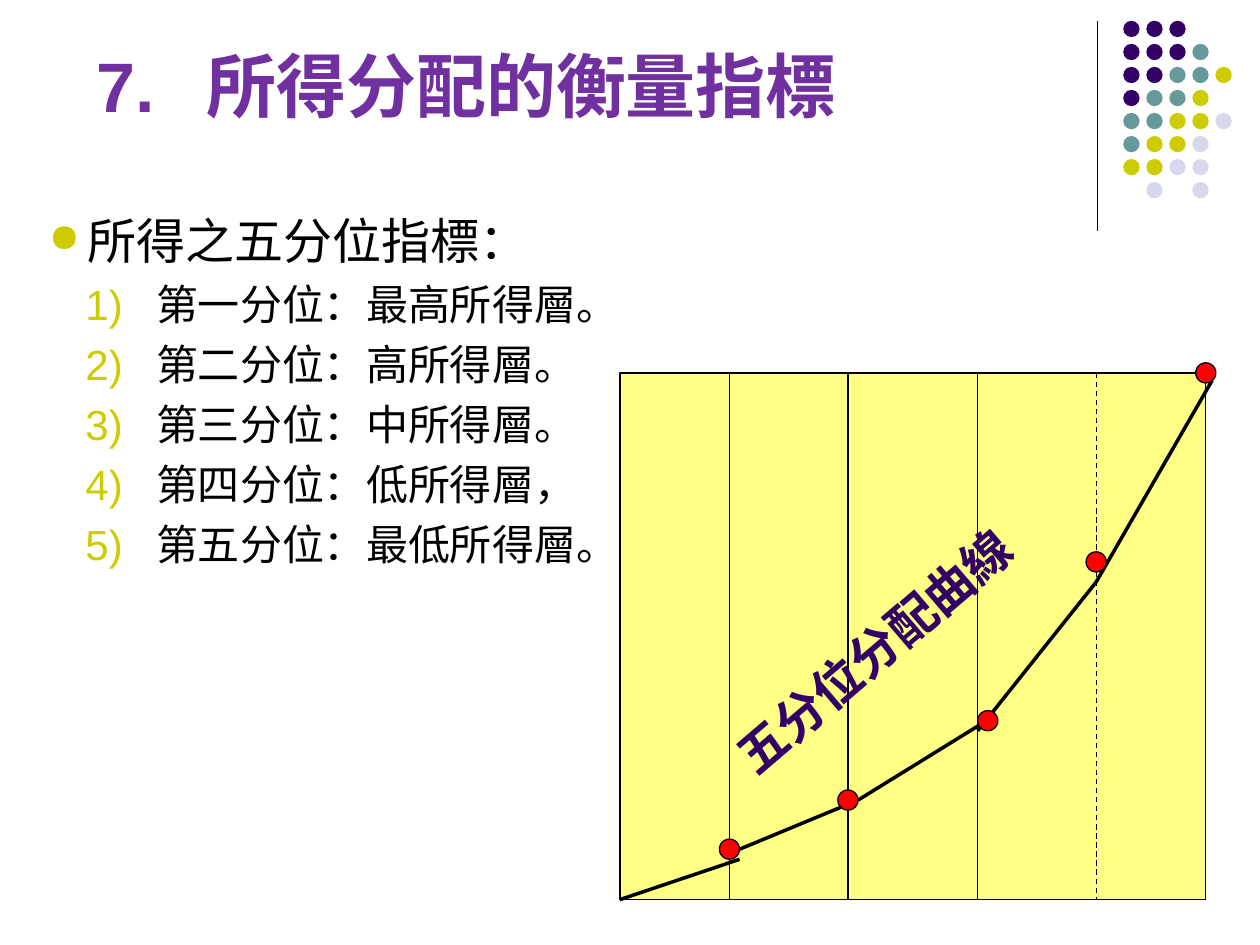
from lxml.etree import SubElement
from pptx import Presentation
from pptx.dml.color import RGBColor
from pptx.enum.dml import MSO_LINE as Dash
from pptx.enum.shapes import MSO_CONNECTOR as Link, MSO_SHAPE as Preset
from pptx.enum.text import MSO_ANCHOR as Anchor, PP_ALIGN as Align
from pptx.oxml.ns import qn
from pptx.util import Inches, Pt

WIDTH, HEIGHT = 10, 7.5
FONT = "Arial"
COLORS = {
    "heading": "7030A0", "ink": "000000", "label": "330066", "bullet": "CCCC00",
    "plot": "FFFF85", "point": "FF0000",
    "A": "330066", "B": "669999", "C": "CCCC00", "D": "D8D8EC",
}

HEADING = "7.\t所得分配的衡量指標"
TOPIC = "所得之五分位指標："
QUINTILES = [
    "第一分位：最高所得層。",
    "第二分位：高所得層。",
    "第三分位：中所得層。",
    "第四分位：低所得層，",
    "第五分位：最低所得層。",
]
CURVE_LABEL = "五分位分配曲線"
DOT_ROWS = ["AAA", "AAAB", "AABBC", "ABBC", "BBCCD", "BCCD", "CCDD", " D D"]

PLOT = {"left": 4.92, "top": 2.96, "right": 9.57, "bottom": 7.14}
DIVIDERS = [(5.79, None), (6.73, None), (7.76, None), (8.7, Dash.DASH)]
CURVE = [
    ((4.92, 7.14), (5.87, 6.82)),
    ((5.87, 6.74), (6.81, 6.35)),
    ((6.81, 6.35), (7.83, 5.72)),
    ((7.76, 5.8), (8.7, 4.62)),
    ((8.7, 4.62), (9.62, 3.02)),
]
POINTS = [(5.79, 6.74), (6.73, 6.35), (7.84, 5.72), (8.7, 4.46), (9.57, 2.96)]

FORMATS = {
    "heading": {"size": Pt(40), "bold": True},
    "topic": {"size": Pt(28), "bold": False},
    "quintile": {"size": Pt(24), "bold": False},
    "label": {"size": Pt(28), "bold": True},
}

deck = Presentation()
deck.slide_width, deck.slide_height = Inches(WIDTH), Inches(HEIGHT)
slide = deck.slides.add_slide(deck.slide_layouts[6])


def rgb(key):
    return RGBColor.from_string(COLORS[key])


def draw_line(start, end, weight=0.75, dash=None):
    line = slide.shapes.add_connector(
        Link.STRAIGHT, *(Inches(v) for v in (*start, *end)))
    line.line.color.rgb = rgb("ink")
    line.line.width = Pt(weight)
    if dash:
        line.line.dash_style = dash
    SubElement(line._element.spPr, qn("a:effectLst"))


def draw_shape(preset, box, fill, outlined=True):
    shape = slide.shapes.add_shape(preset, *(Inches(v) for v in box))
    shape.shadow.inherit = False
    shape.fill.solid()
    shape.fill.fore_color.rgb = rgb(fill)
    if outlined:
        shape.line.color.rgb = rgb("ink")
        shape.line.width = Pt(0.75)
    else:
        shape.line.fill.background()


def draw_dot(center, size, fill, outlined=True):
    x, y = center
    draw_shape(Preset.OVAL, (x - size / 2, y - size / 2, size, size), fill, outlined)


def add_box(*box, **frame_format):
    holder = slide.shapes.add_textbox(*(Inches(v) for v in box))
    for name, value in {"word_wrap": True, **frame_format}.items():
        setattr(holder.text_frame, name, value)
    return holder


def write(paragraph, text, style, color="ink"):
    run = paragraph.add_run()
    run.text = text
    for name, value in {"name": FONT, **FORMATS[style]}.items():
        setattr(run.font, name, value)
    run.font.color.rgb = rgb(color)
    SubElement(run.font._element, qn("a:ea"), typeface=FONT)


def hang(paragraph, margin, indent):
    props = paragraph._p.get_or_add_pPr()
    props.set("marL", str(Inches(margin)))
    props.set("indent", str(Inches(indent)))
    return props


def add_bullet(paragraph, margin, indent, size, tag, **mark):
    props = hang(paragraph, margin, indent)
    tint = SubElement(props, qn("a:buClr"))
    SubElement(tint, qn("a:srgbClr"), val=COLORS["bullet"])
    SubElement(props, qn("a:buSzPct"), val=str(size * 1000))
    SubElement(props, qn(tag), **mark)


draw_line((8.71, 0.17), (8.71, 1.83))
dot_pitch = 1.28 / (len(DOT_ROWS) - 1)
for row, codes in enumerate(DOT_ROWS):
    for column, code in enumerate(codes):
        if code in COLORS:
            center = (8.98 + column * dot_pitch, 0.23 + row * dot_pitch)
            draw_dot(center, 0.13, code, outlined=False)

heading = add_box(0.67, 0.29, 8.03, 0.94).text_frame.paragraphs[0]
hang(heading, 0.87, -0.87)
write(heading, HEADING, "heading", "heading")

outline = add_box(0.2, 1.62, 4.8, 3.54, margin_right=0).text_frame
topic = outline.paragraphs[0]
topic.space_before = Pt(6)
add_bullet(topic, 0.4, -0.31, 80, "a:buChar", char="●")
write(topic, TOPIC, "topic")
for text in QUINTILES:
    quintile = outline.add_paragraph()
    quintile.level = 1
    quintile.space_before = Pt(5.5)
    add_bullet(quintile, 0.94, -0.56, 100, "a:buAutoNum", type="arabicParenR")
    write(quintile, text, "quintile")

left, top, right, bottom = PLOT.values()
draw_shape(Preset.RECTANGLE, (left, top, right - left, bottom - top), "plot")
for x, dash in DIVIDERS:
    draw_line((x, top), (x, bottom), dash=dash)
for start, end in CURVE:
    draw_line(start, end, weight=2)
for point in POINTS:
    draw_dot(point, 0.16, "point")

curve_label = add_box(5.46, 4.88, 2.95, 0.57, word_wrap=False,
                      vertical_anchor=Anchor.MIDDLE)
curve_label.rotation = 319.5
label = curve_label.text_frame.paragraphs[0]
label.alignment = Align.CENTER
write(label, CURVE_LABEL, "label", "label")

deck.save("out.pptx")
